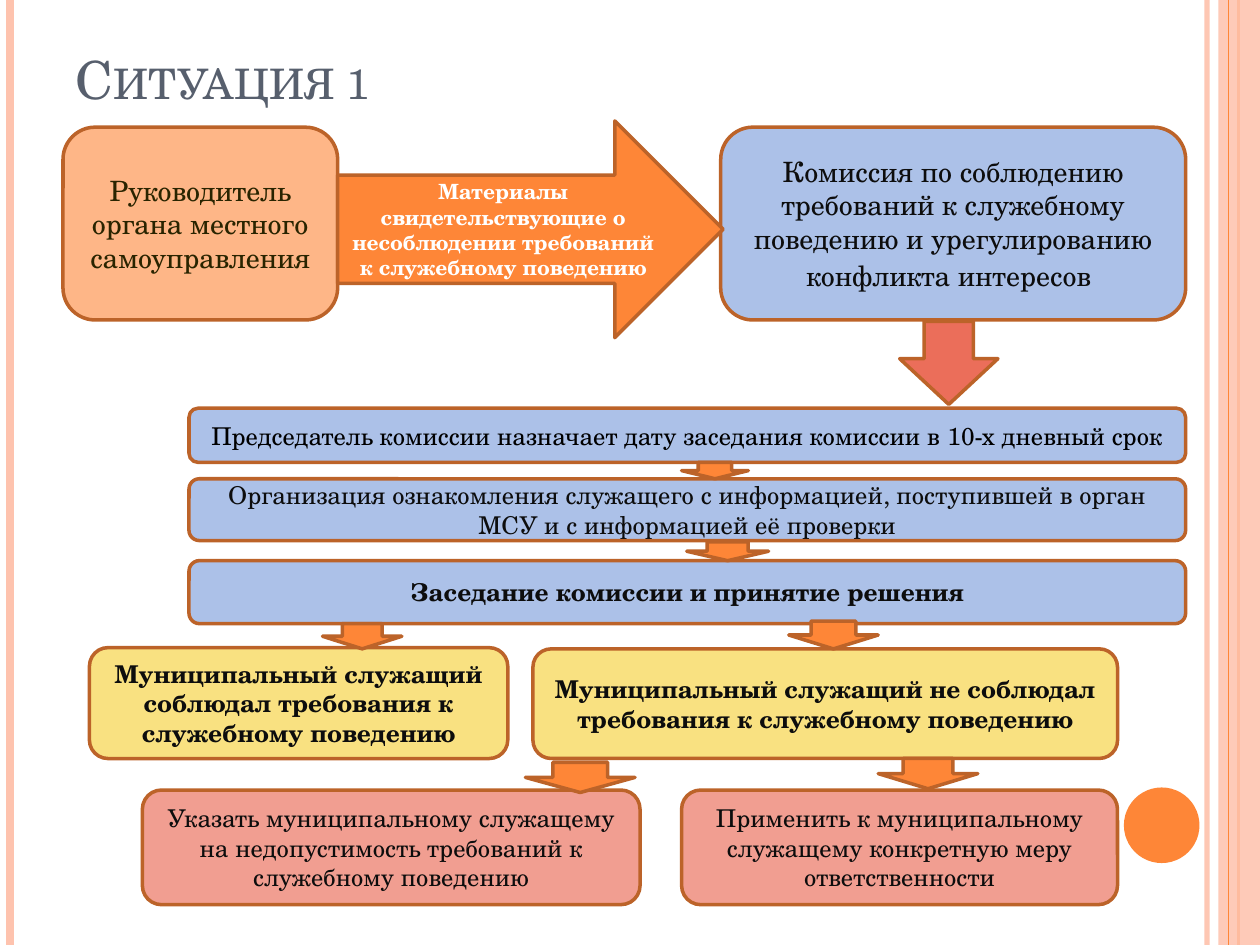
from pptx import Presentation, util as u
from pptx.dml.color import RGBColor
from pptx.enum import shapes, text
from pptx.oxml import ns, xmlchemy

FONT = "TeX Gyre Schola"
COLORS = {
    "pale": "FEC3AE", "orange": "FE8637", "peach": "FEB687", "blue": "ACC1E8",
    "yellow": "F9E181", "rose": "F19E91", "coral": "EB6E5A", "edge": "BC6329",
    "title": "575F6D", "olive": "292400", "ink": "0D0D0D", "black": "000000",
    "white": "FFFFFF",
}
KIND = shapes.MSO_SHAPE


def color(name):
    return RGBColor.from_string(COLORS[name])


def set_alpha(properties, percent):
    hue = properties.find(".//" + ns.qn("a:srgbClr"))
    alpha = xmlchemy.OxmlElement("a:alpha")
    alpha.set("val", str(percent * 1000))
    hue.append(alpha)


def write(frame, content, size=14, ink="ink", bold=False, small_caps=False,
          align=text.PP_ALIGN.CENTER, anchor=text.MSO_ANCHOR.MIDDLE, tail_size=None):
    frame.word_wrap = True
    frame.vertical_anchor = anchor
    para = frame.paragraphs[0]
    para.alignment = align
    parts = [(content, size)] + ([(" ", tail_size)] if tail_size else [])
    for words, points in parts:
        span = para.add_run()
        span.text = words
        span.font.name = FONT
        span.font.size = u.Pt(points)
        span.font.bold = bold
        span.font.color.rgb = color(ink)
        if small_caps:
            span.font._element.set("cap", "small")


def add_block(page, kind, box, fill, edge="edge"):
    block = page.shapes.add_shape(kind, *map(u.Inches, box))
    block.shadow.inherit = False
    block.fill.solid()
    block.fill.fore_color.rgb = color(fill)
    if edge:
        block.line.color.rgb = color(edge)
        block.line.width = u.Pt(2)
    else:
        block.line.fill.background()
    return block


def add_card(page, box, fill, content, **style):
    card = add_block(page, KIND.ROUNDED_RECTANGLE, box, fill)
    write(card.text_frame, content, **style)


def add_down_arrow(page, box, fill="orange", head=0.5):
    arrow = add_block(page, KIND.DOWN_ARROW, box, fill)
    arrow.adjustments[1] = head


def add_stripe(page, x, height, tint, width, alpha=None):
    stripe = page.shapes.add_connector(
        shapes.MSO_CONNECTOR.STRAIGHT, u.Inches(x), 0, u.Inches(x), u.Inches(height))
    stripe.line.color.rgb = color(tint)
    stripe.line.width = u.Pt(width)
    properties = stripe._element.spPr
    properties.append(xmlchemy.OxmlElement("a:effectLst"))
    if alpha:
        set_alpha(properties, alpha)


def draw_frame(page, width, height):
    add_stripe(page, width - 0.42, height, "pale", 3, 93)
    add_stripe(page, 0.08, height, "pale", 4.5)
    add_stripe(page, width - 0.17, height, "orange", 1.5)
    band = add_block(page, KIND.RECTANGLE, (width - 0.33, 0, 0.33, height), "pale", None)
    set_alpha(band._element.spPr, 87)
    add_stripe(page, width - 0.25, height, "orange", 0.75)
    add_block(page, KIND.OVAL, (width - 1.08, height - 1.25, 0.6, 0.6), "orange", None)


def draw_title(page, box):
    title = page.shapes.add_textbox(*map(u.Inches, box))
    write(title.text_frame, "Ситуация 1", size=30, ink="title", small_caps=True,
          align=text.PP_ALIGN.LEFT, anchor=text.MSO_ANCHOR.BOTTOM)


def draw_referral(page, left, top, width, height):
    head_width, commission_width = 2.18, 3.69
    commission_left = left + width - commission_width
    add_card(page, (left, top, head_width, height), "peach",
             "Руководитель органа местного самоуправления", size=16, ink="olive")
    add_card(page, (commission_left, top, commission_width, height), "blue",
             "Комиссия по соблюдению требований к служебному поведению "
             "и урегулированию конфликта интересов", size=16, tail_size=18)
    materials = add_block(page, KIND.RIGHT_ARROW,
                          (left + head_width, top - 0.05, 3.06, 1.72), "orange")
    write(materials.text_frame,
          "Материалы свидетельствующие о несоблюдении требований к служебному поведению",
          size=12, ink="white", bold=True)
    add_down_arrow(page, (commission_left + 1.42, top + height + 0.01, 0.78, 0.66),
                   "coral", 0.55)


def draw_procedure(page, left, top, width):
    steps = [
        (0, 0.43, "Председатель комиссии назначает дату заседания комиссии "
         "в 10-х дневный срок", {"ink": "black"}),
        (0.56, 0.49, "Организация ознакомления служащего с информацией, поступившей "
         "в орган МСУ и с информацией её проверки", {}),
        (1.21, 0.5, "Заседание комиссии и принятие решения", {"bold": True}),
    ]
    for drop, height, content, style in steps:
        add_card(page, (left, top + drop, width, height), "blue", content, **style)
    for shift, drop, arrow_width, height in [(3.91, 0.43, 0.53, 0.13),
                                             (3.95, 1.06, 0.65, 0.15)]:
        add_down_arrow(page, (left + shift, top + drop, arrow_width, height))


def draw_outcomes(page, left, top, width):
    cards = [
        (0, 0, 3.32, 0.88, "yellow", True,
         "Муниципальный служащий соблюдал требования к служебному поведению"),
        (width - 4.64, 0.01, 4.64, 0.87, "yellow", True,
         "Муниципальный служащий не соблюдал требования к служебному поведению"),
        (0.42, 1.13, 3.95, 0.91, "rose", False,
         "Указать муниципальному служащему на недопустимость требований "
         "к служебному поведению"),
        (width - 3.46, 1.13, 3.46, 0.91, "rose", False,
         "Применить к муниципальному служащему конкретную меру ответственности"),
    ]
    for shift, drop, card_width, height, fill, bold, content in cards:
        add_card(page, (left + shift, top + drop, card_width, height), fill,
                 content, bold=bold)
    arrows = [(1.85, -0.19, 0.63, 0.2), (5.55, -0.21, 0.71, 0.22),
              (3.46, 0.91, 0.87, 0.24), (6.26, 0.88, 0.79, 0.24)]
    for shift, drop, arrow_width, height in arrows:
        add_down_arrow(page, (left + shift, top + drop, arrow_width, height))


def main():
    deck = Presentation()
    deck.slide_width, deck.slide_height = u.Inches(10), u.Inches(7.5)
    page = deck.slides.add_slide(deck.slide_layouts[6])
    draw_frame(page, 10, 7.5)
    draw_title(page, (0.5, 0.3, 8.17, 0.62))
    draw_referral(page, 0.5, 1.01, 8.91, 1.53)
    draw_procedure(page, 1.5, 3.24, 7.91)
    draw_outcomes(page, 0.71, 5.14, 8.16)
    deck.save("out.pptx")


if __name__ == "__main__":
    main()
